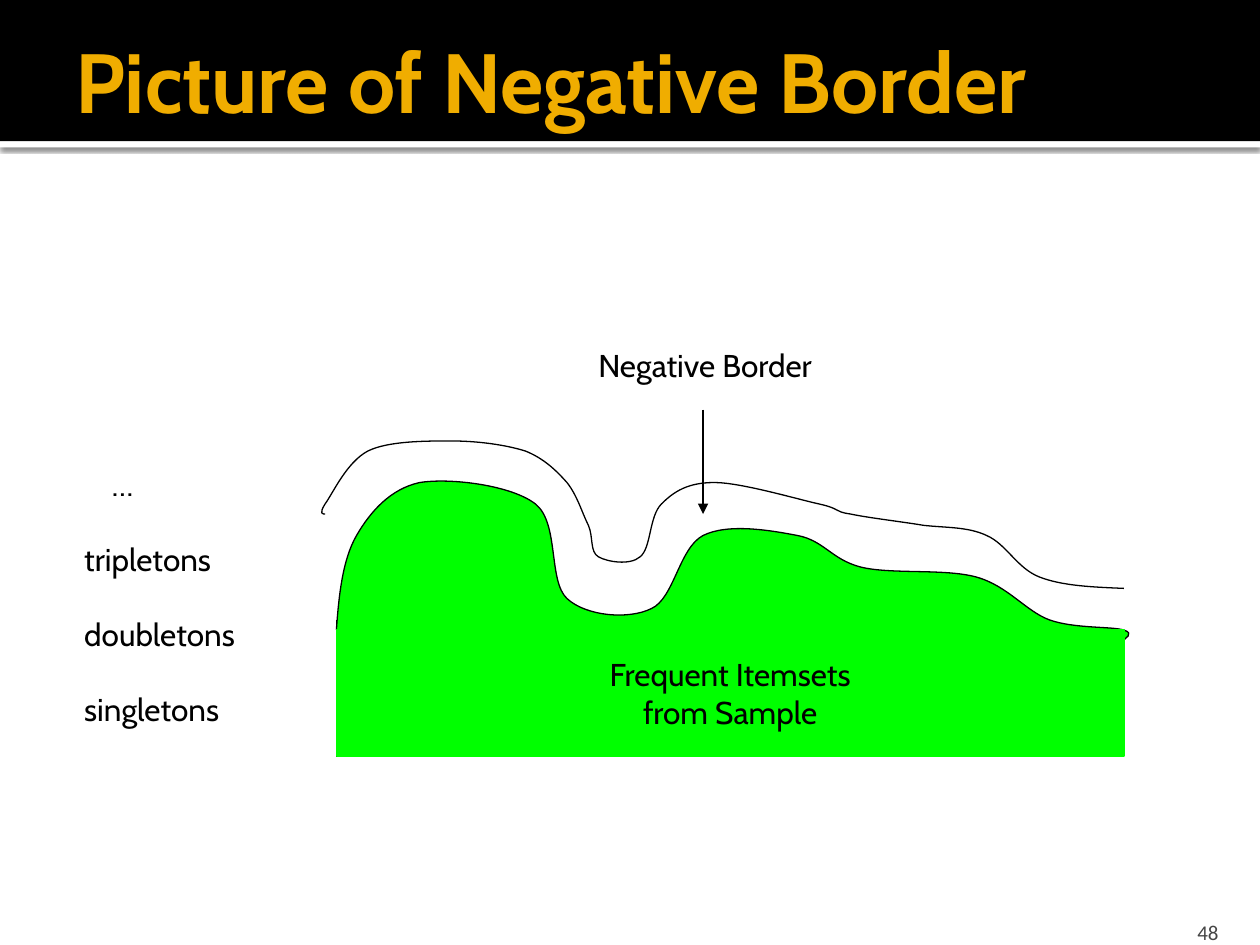
from lxml.etree import SubElement
from pptx import Presentation
from pptx.dml.color import RGBColor
from pptx.enum.shapes import MSO_CONNECTOR, MSO_SHAPE
from pptx.enum.text import MSO_ANCHOR, PP_ALIGN
from pptx.oxml.ns import qn
from pptx.util import Inches, Pt

BLACK, WHITE, GREEN, GOLD, GRAY = "000000", "FFFFFF", "00FF00", "F0AD00", "454545"
ITEMSET_CURVE = [
    (2.67, 5), (2.69, 4.72), (2.72, 4.44), (2.83, 4.25), (2.94, 4.06), (3.1, 3.88), (3.33, 3.83),
    (3.57, 3.79), (4.06, 3.85), (4.25, 4), (4.44, 4.15), (4.35, 4.61), (4.5, 4.75),
    (4.65, 4.89), (4.99, 4.92), (5.17, 4.83), (5.35, 4.75), (5.39, 4.35), (5.58, 4.25),
    (5.78, 4.15), (6.12, 4.21), (6.33, 4.25), (6.54, 4.29), (6.6, 4.44), (6.83, 4.5),
    (7.07, 4.56), (7.5, 4.51), (7.75, 4.58), (8, 4.65), (8.14, 4.85), (8.33, 4.92),
    (8.53, 4.99), (8.82, 4.97), (8.92, 5), (9.01, 5.03), (8.92, 5.07), (8.92, 5.08),
]
BORDER_CURVE = [
    (2.58, 4.08), (2.56, 4.08), (2.53, 4.08), (2.58, 4), (2.64, 3.92), (2.75, 3.67), (2.92, 3.58),
    (3.08, 3.5), (3.38, 3.5), (3.58, 3.5), (3.79, 3.5), (4.01, 3.53), (4.17, 3.58),
    (4.32, 3.64), (4.42, 3.74), (4.5, 3.83), (4.58, 3.93), (4.62, 4.07), (4.67, 4.17),
    (4.71, 4.26), (4.68, 4.38), (4.75, 4.42), (4.82, 4.46), (5, 4.49), (5.08, 4.42),
    (5.17, 4.35), (5.15, 4.1), (5.25, 4), (5.35, 3.9), (5.46, 3.83), (5.67, 3.83),
    (5.88, 3.83), (6.32, 3.96), (6.5, 4), (6.68, 4.04), (6.61, 4.06), (6.75, 4.08),
    (6.89, 4.11), (7.15, 4.14), (7.33, 4.17), (7.51, 4.19), (7.68, 4.18), (7.83, 4.25),
    (7.99, 4.32), (8.07, 4.51), (8.25, 4.58), (8.43, 4.65), (8.67, 4.66), (8.92, 4.67),
]


def color(value):
    """Return the colour for a hex string."""
    return RGBColor.from_string(value)


def apply_format(target, values):
    """Set each attribute of the target from a dict."""
    for name, value in values.items():
        setattr(target, name, value)


def write_text(shape, lines, frame_format=None, paragraph_format=None, font_format=None, ink=BLACK):
    """Write one paragraph for each line with shared formatting."""
    frame = shape.text_frame
    apply_format(frame, {"word_wrap": True, **(frame_format or {})})
    frame.text = "\n".join(lines)
    for paragraph in frame.paragraphs:
        apply_format(paragraph, paragraph_format or {})
        for run in paragraph.runs:
            apply_format(run.font, {"name": "Cabin", "size": Pt(18), **(font_format or {})})
            run.font.color.rgb = color(ink)
    return frame


def add_text(slide, box, lines, **formats):
    """Add a text box in the given box."""
    shape = slide.shapes.add_textbox(*map(Inches, box))
    return write_text(shape, lines, **formats)


def add_block(slide, box, fill):
    """Add a borderless filled rectangle."""
    shape = slide.shapes.add_shape(MSO_SHAPE.RECTANGLE, *map(Inches, box))
    shape.shadow.inherit = False
    shape.fill.solid()
    shape.fill.fore_color.rgb = color(fill)
    shape.line.fill.background()
    return shape


def add_line(slide, start, end, arrow=False):
    """Add a thin black line, with an arrowhead at its end if asked."""
    connector = slide.shapes.add_connector(MSO_CONNECTOR.STRAIGHT, *map(Inches, start + end))
    connector.line.color.rgb = color(BLACK)
    connector.line.width = Pt(0.75)
    if arrow:
        SubElement(connector.line._get_or_add_ln(), qn("a:tailEnd"), type="triangle")
    SubElement(connector._element.spPr, qn("a:effectLst"))


def bend_segments(shape):
    """Turn each three straight segments of the outline into one cubic curve."""
    outline = next(shape._element.iter(qn("a:path")))
    segments = outline.findall(qn("a:lnTo"))
    for first in range(0, len(segments), 3):
        curve = SubElement(outline, qn("a:cubicBezTo"))
        for segment in segments[first:first + 3]:
            curve.append(segment[0])
            outline.remove(segment)


def add_curve(slide, box, controls, fill=None):
    """Add an open smooth curve, shifted to the corner of its diagram box."""
    left, top = box[:2]
    points = [(Inches(left + x - 2.53), Inches(top + y - 2.7)) for x, y in controls]
    builder = slide.shapes.build_freeform(*points[0])
    builder.add_line_segments(points[1:], close=False)
    shape = builder.convert_to_shape()
    bend_segments(shape)
    shape.shadow.inherit = False
    if fill:
        shape.fill.solid()
        shape.fill.fore_color.rgb = color(fill)
    else:
        shape.fill.background()
    shape.line.color.rgb = color(BLACK)
    shape.line.width = Pt(0.75)


def add_header(slide, box, title):
    """Add the black title band with its shadowed white edge."""
    left, top, width, height = box
    edge = add_block(slide, (left, top + height, width, 0.05), WHITE)
    shadow = SubElement(edge._element.spPr.find(qn("a:effectLst")), qn("a:outerShdw"),
                        blurRad=str(Pt(2.5)), dist=str(Pt(0.8)), dir="5400000",
                        algn="tl", rotWithShape="0")
    shade = SubElement(shadow, qn("a:srgbClr"), val=BLACK)
    SubElement(shade, qn("a:alpha"), val="60000")
    add_block(slide, box, BLACK)
    add_text(slide, (left + 0.5, top + 0.17, width - 0.5, 0.92), [title],
             frame_format={"vertical_anchor": MSO_ANCHOR.MIDDLE, "margin_right": Inches(0.05)},
             font_format={"size": Pt(48), "bold": True}, ink=GOLD)


def add_level_labels(slide, box, labels):
    """Add the evenly spaced labels of the itemset sizes."""
    frame = add_text(slide, box, labels, paragraph_format={"space_before": Pt(21.3)})
    first = frame.paragraphs[0]
    first.space_before = Pt(0)
    first._p.get_or_add_pPr().set("marL", str(Inches(0.22)))


def add_diagram(slide, box):
    """Add the itemset area, the border above it and their captions."""
    left, top, width, height = box
    base_left, right, bottom = left + 0.14, left + width, top + height
    arrow_x = left + 3.05
    add_curve(slide, box, ITEMSET_CURVE, GREEN)
    add_curve(slide, box, BORDER_CURVE)
    add_text(slide, (left + 2.12, top, 2.57, 0.5), ["Negative Border"])
    add_line(slide, (arrow_x, top + 0.55), (arrow_x, top + 1.38), arrow=True)
    add_line(slide, (base_left, bottom), (right, bottom))
    add_line(slide, (base_left, bottom), (base_left, bottom - 1.08))
    add_line(slide, (right, bottom - 1), (right, bottom))
    base = add_block(slide, (base_left, bottom - 1, right - base_left, 1), GREEN)
    base.line.color.rgb = color(GREEN)
    base.line.width = Pt(0)
    write_text(base, ["Frequent Itemsets", "from Sample"],
               frame_format={"vertical_anchor": MSO_ANCHOR.MIDDLE},
               paragraph_format={"alignment": PP_ALIGN.CENTER})


def add_page_number(slide, box, number):
    """Add the page number at the bottom right."""
    add_text(slide, box, [number],
             frame_format={"vertical_anchor": MSO_ANCHOR.BOTTOM, "margin_bottom": 0},
             paragraph_format={"alignment": PP_ALIGN.RIGHT},
             font_format={"name": "Calibri", "size": Pt(12)}, ink=GRAY)


def main():
    """Build and save the slide."""
    presentation = Presentation()
    apply_format(presentation, {"slide_width": Inches(10), "slide_height": Inches(7.5)})
    slide = presentation.slides.add_slide(presentation.slide_layouts[6])
    add_header(slide, (0, 0, 10, 1.12), "Picture of Negative Border")
    add_page_number(slide, (8.97, 7.2, 0.8, 0.3), "48")
    add_level_labels(slide, (0.57, 3.64, 1.81, 2.9), ["…", "tripletons", "doubletons", "singletons"])
    add_diagram(slide, (2.53, 2.7, 6.39, 3.3))
    presentation.save("out.pptx")


if __name__ == "__main__":
    main()
